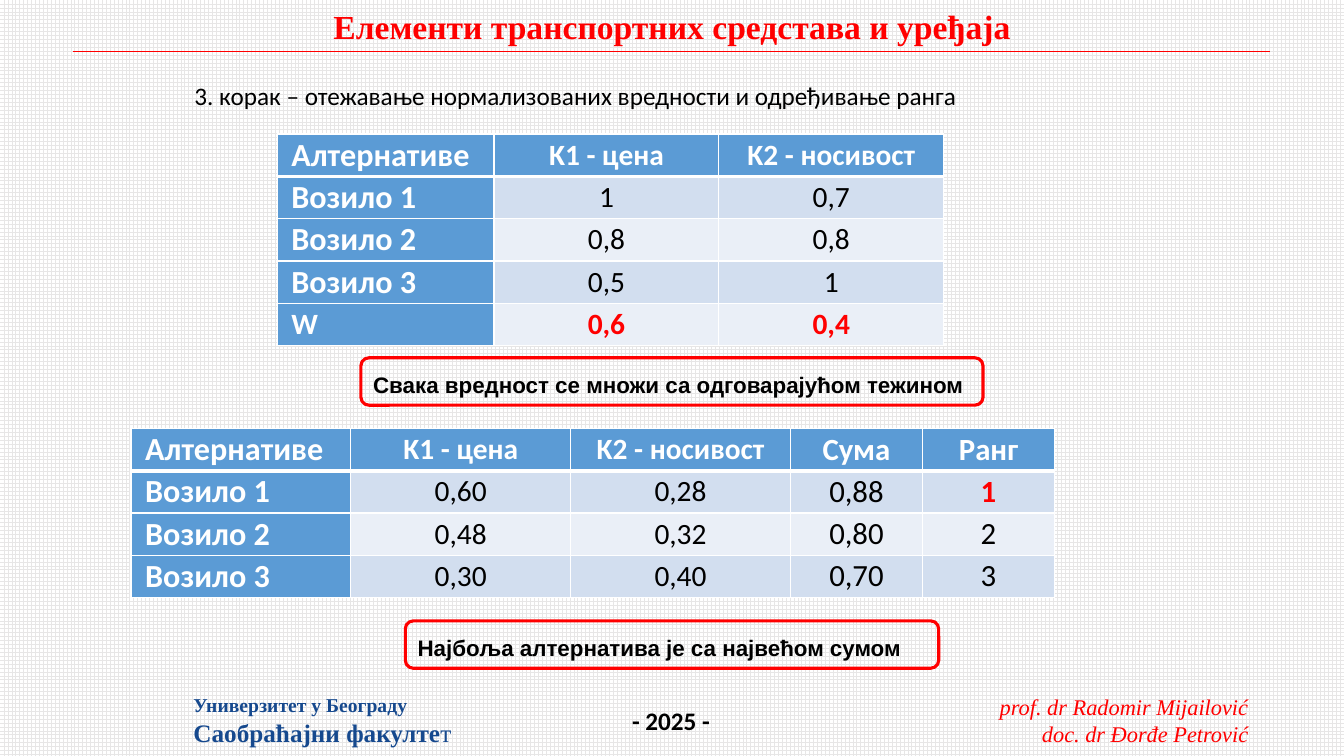
from lxml import etree
from pptx import Presentation
from pptx.dml.color import RGBColor
from pptx.enum.dml import MSO_PATTERN
from pptx.enum.shapes import MSO_CONNECTOR, MSO_SHAPE
from pptx.enum.text import MSO_ANCHOR, MSO_AUTO_SIZE as AutoSize, PP_ALIGN as Align
from pptx.oxml import parse_xml
from pptx.oxml.ns import nsdecls, qn
from pptx.util import Inches, Pt

COLORS = {
    "red": "FF0000", "black": "000000", "white": "FFFFFF", "navy": "16498E",
    "grid": "E7E6E6", "header": "5B9BD5", "odd": "D2DEEF", "even": "EAEFF7",
}
SERIF, SANS, ARIAL = "Times New Roman", "Calibri", "Arial"
ROW_HEIGHT = 0.42


def rgb(name):
    return RGBColor.from_string(COLORS[name])


class LectureSlide:
    def __init__(self, deck):
        self.page = deck.slides.add_slide(deck.slide_layouts[6])

    def background(self):
        fill = self.page.background.fill
        fill.patterned()
        fill.pattern = MSO_PATTERN.LARGE_GRID
        fill.fore_color.rgb = rgb("grid")
        fill.back_color.rgb = rgb("white")

    def style(self, font, face, size, color, bold=False, italic=False):
        font.name, font.size, font.color.rgb = face, Pt(size), rgb(color)
        font.bold, font.italic = bold, italic

    def text(self, place, lines, face, sizes, color, align=Align.LEFT, **looks):
        box = self.page.shapes.add_textbox(*map(Inches, place))
        frame = box.text_frame
        frame.word_wrap = False
        frame.auto_size = AutoSize.SHAPE_TO_FIT_TEXT
        frame.text = "\n".join(lines)
        for para, size in zip(frame.paragraphs, sizes):
            para.alignment = align
            self.style(para.font, face, size, color, **looks)
        return frame

    def rule(self, left, right, y):
        line = self.page.shapes.add_connector(
            MSO_CONNECTOR.STRAIGHT, *map(Inches, (left, y, right, y)))
        line.line.color.rgb = rgb("red")
        line.line.width = Pt(0.5)
        etree.SubElement(line._element.spPr, qn("a:effectLst"))

    def note(self, place, words):
        box = self.page.shapes.add_shape(
            MSO_SHAPE.ROUNDED_RECTANGLE, *map(Inches, place))
        box.shadow.inherit = False
        box.fill.background()
        box.line.color.rgb = rgb("red")
        box.line.width = Pt(2.25)
        frame = box.text_frame
        frame.word_wrap = True
        frame.vertical_anchor = MSO_ANCHOR.MIDDLE
        para = frame.paragraphs[0]
        para.text = words
        para.alignment = Align.LEFT
        para.line_spacing = 1.2
        self.style(para.font, ARIAL, 16, "black", bold=True)

    def borders(self, cell, row):
        widths = {"L": 1, "R": 1, "T": 3 if row == 1 else 1, "B": 3 if row == 0 else 1}
        for index, (side, width) in enumerate(widths.items()):
            cell._tc.get_or_add_tcPr().insert(index, parse_xml(
                f'<a:ln{side} {nsdecls("a")} w="{Pt(width)}"><a:solidFill>'
                f'<a:srgbClr val="{COLORS["white"]}"/></a:solidFill></a:ln{side}>'))

    def table(self, left, top, widths, rows, red_cells):
        table = self.page.shapes.add_table(
            len(rows), len(widths), Inches(left), Inches(top),
            Inches(sum(widths)), Inches(ROW_HEIGHT * len(rows))).table
        for column, width in zip(table.columns, widths):
            column.width = Inches(width)
        for r, values in enumerate(rows):
            table.rows[r].height = Inches(ROW_HEIGHT)
            for c, value in enumerate(values):
                self.cell(table.cell(r, c), r, c, value, (r, c) in red_cells)

    def cell(self, cell, row, col, value, is_red):
        is_head = row == 0 or col == 0
        cell.fill.solid()
        cell.fill.fore_color.rgb = rgb(
            "header" if is_head else "odd" if row % 2 else "even")
        self.borders(cell, row)
        cell.vertical_anchor = MSO_ANCHOR.MIDDLE
        cell.margin_left = cell.margin_right = Inches(0.13 if col else 0.14)
        cell.margin_top = cell.margin_bottom = 0
        para = cell.text_frame.paragraphs[0]
        para.text = value
        para.alignment = Align.CENTER if col else Align.LEFT
        size = 22 if col > 2 else 21 if col or value == "W" else 23
        color = "red" if is_red else "white" if is_head else "black"
        self.style(para.font, SANS, size, color, bold=is_head or is_red)


def main():
    deck = Presentation()
    deck.slide_width, deck.slide_height = Inches(13.33), Inches(7.5)
    slide = LectureSlide(deck)
    slide.background()

    # Header and footer
    slide.text((9.77, 6.83, 2.71, 0.64),
               ["prof. dr Radomir Mijailović", "doc. dr Đorđe Petrović"],
               SERIF, (16, 16), "red", Align.RIGHT, italic=True)
    slide.rule(0.72, 12.6, 0.51)
    slide.text((3.17, 0.01, 6.99, 0.5), ["Елементи транспортних средстава и уређаја"],
               SERIF, (24,), "red", Align.CENTER, bold=True)
    slide.text((6.17, 6.95, 0.98, 0.4), ["- 2025 -"], SANS, (18,), "black", bold=True)
    school = slide.text((1.82, 6.83, 2.79, 0.64),
                        ["Универзитет у Београду", "Саобраћајни факулте"],
                        SERIF, (14, 18), "navy", bold=True)
    span = school.paragraphs[1].add_run()
    span.text = "т"
    span.font.bold = False

    # Step heading
    slide.text((1.83, 0.75, 7.85, 0.4),
               ["3. корак – отежавање нормализованих вредности и одређивање ранга"],
               SANS, (18,), "black")

    # Normalised values with weights
    heads = ["Алтернативе", "K1 - цена", "K2 - носивост"]
    slide.table(2.75, 1.33, [2.15, 2.23, 2.23], [
        heads,
        ["Возило 1", "1", "0,7"],
        ["Возило 2", "0,8", "0,8"],
        ["Возило 3", "0,5", "1"],
        ["W", "0,6", "0,4"],
    ], {(4, 1), (4, 2)})

    # Weighted values and ranks
    slide.table(1.3, 4.25, [2.18] * 3 + [1.31] * 2, [
        heads + ["Сума", "Ранг"],
        ["Возило 1", "0,60", "0,28", "0,88", "1"],
        ["Возило 2", "0,48", "0,32", "0,80", "2"],
        ["Возило 3", "0,30", "0,40", "0,70", "3"],
    ], {(1, 4)})

    # Notes under the tables
    slide.note((3.58, 3.55, 6.17, 0.47), "Свака вредност се множи са одговарајућом тежином")
    slide.note((4.02, 6.16, 5.29, 0.47), "Најбоља алтернатива је са највећом сумом")

    deck.save("out.pptx")


if __name__ == "__main__":
    main()
